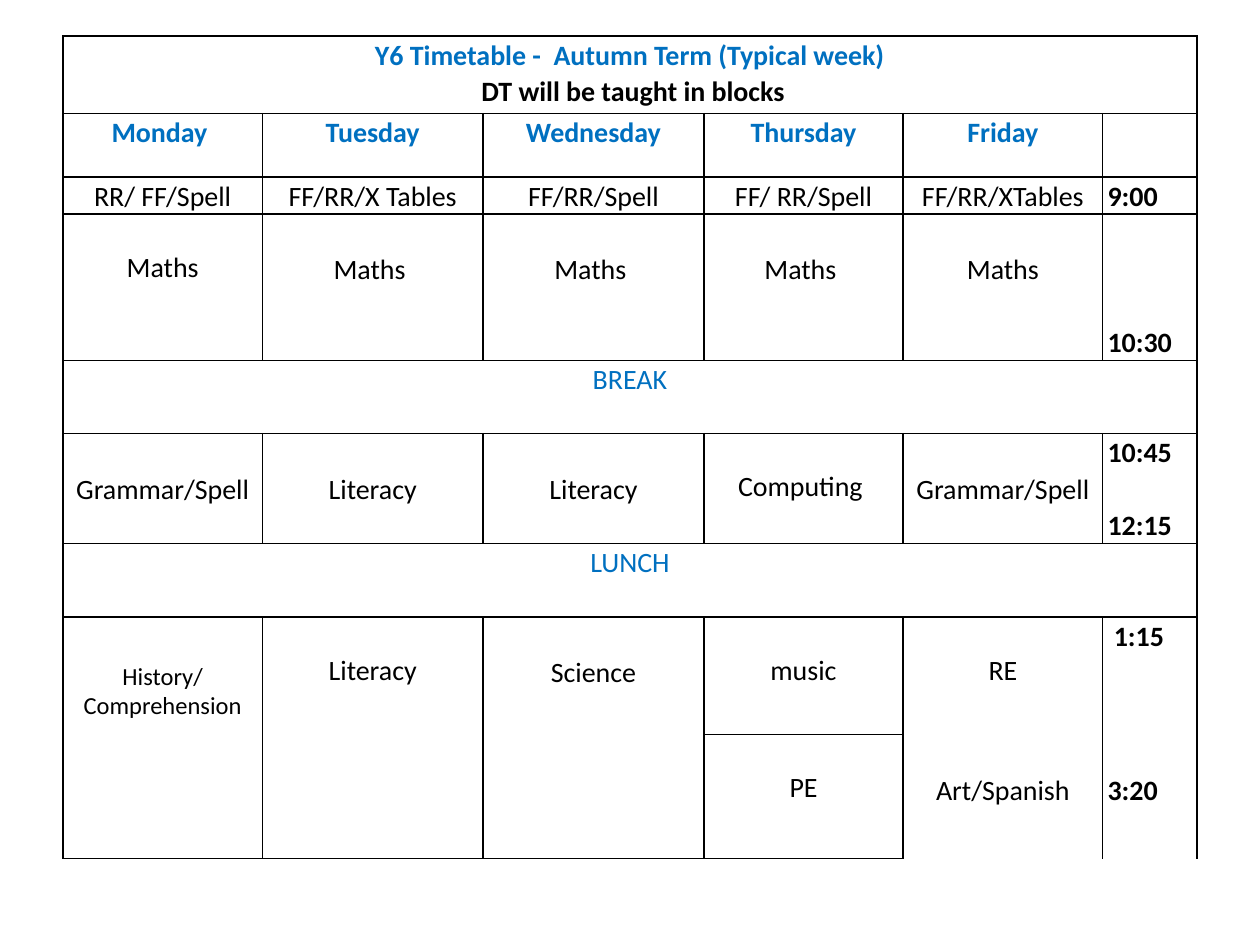
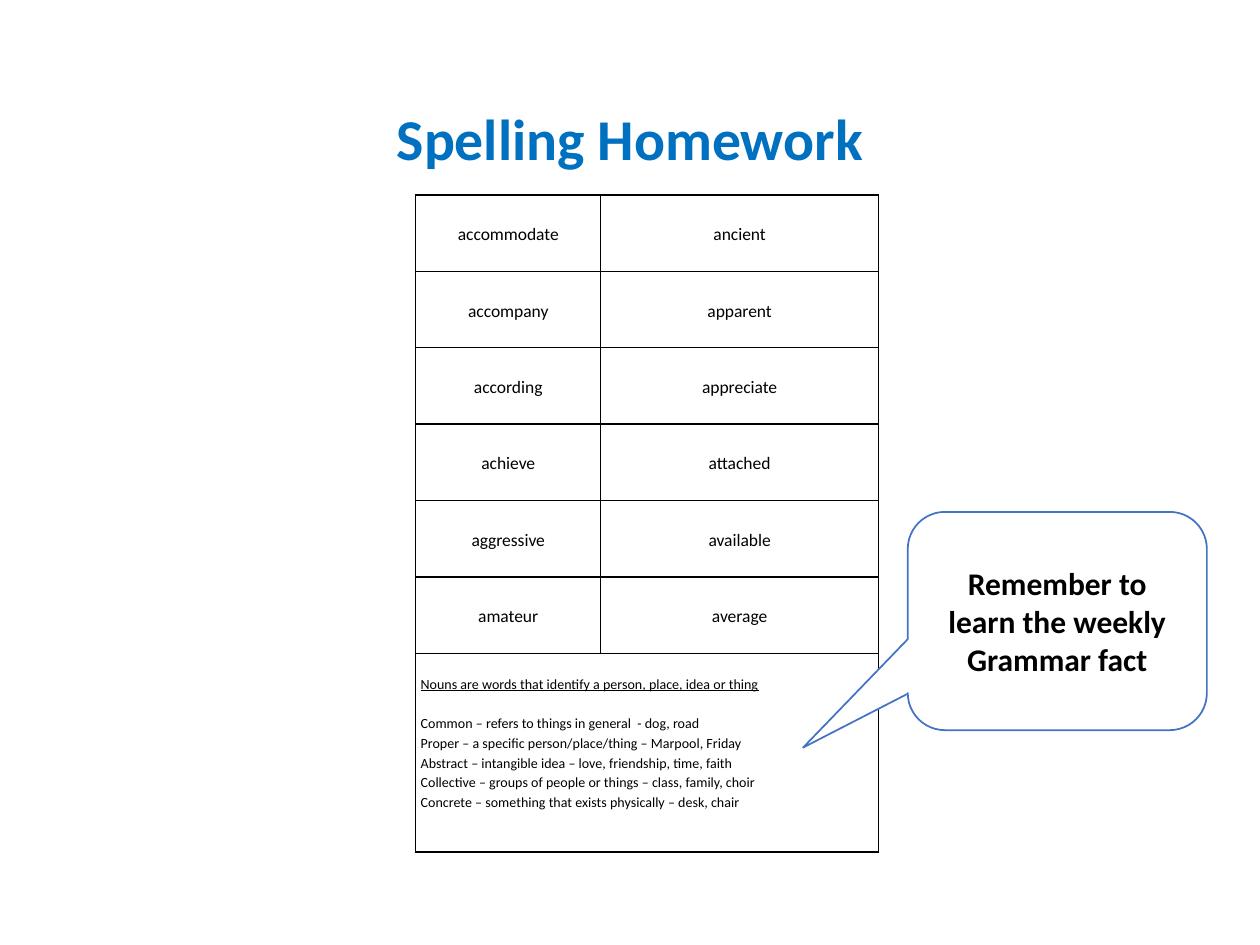
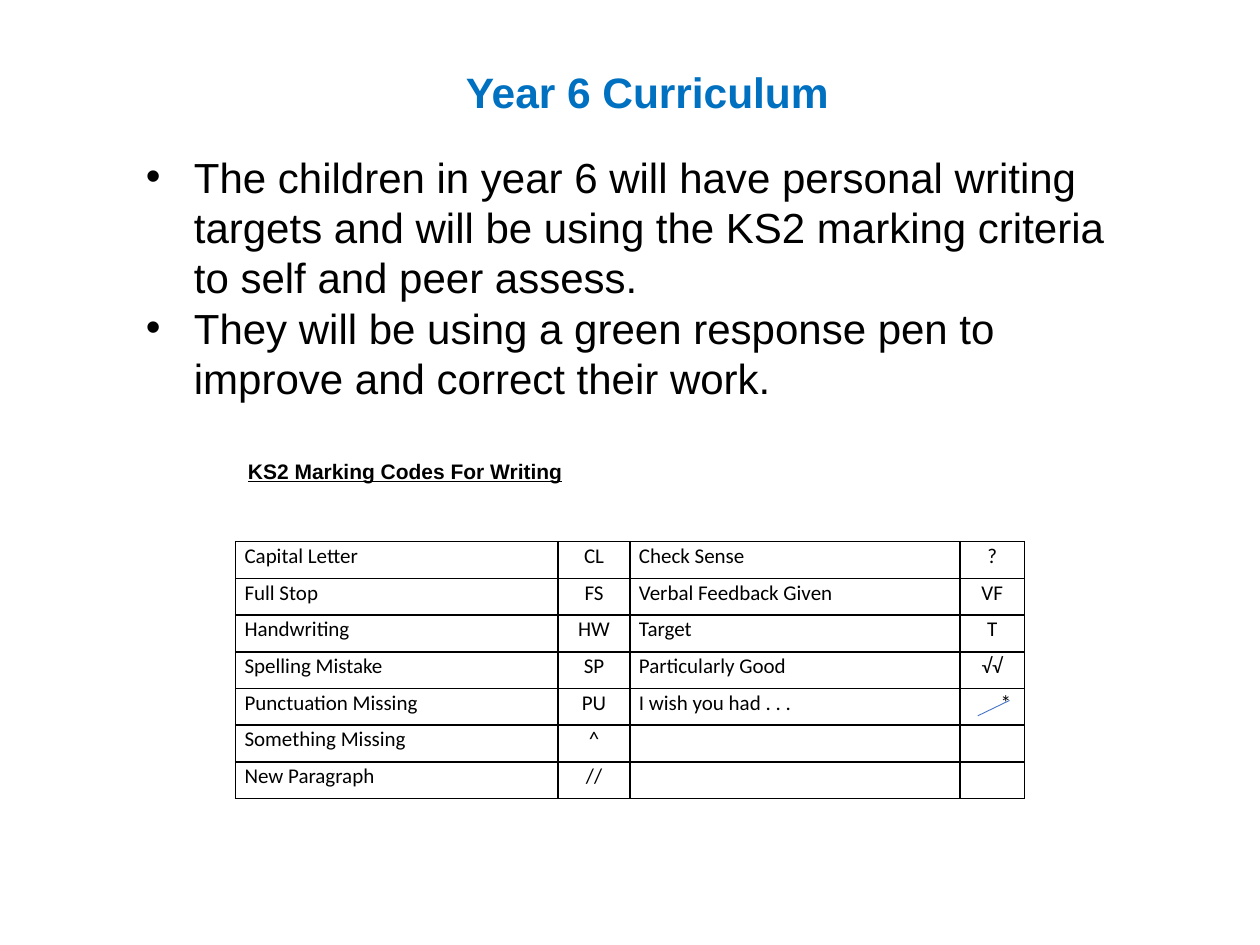
from dataclasses import dataclass, replace

from lxml.etree import SubElement
from pptx import Presentation
from pptx.dml.color import RGBColor
from pptx.enum.shapes import MSO_CONNECTOR as Link, MSO_SHAPE as Shape
from pptx.enum.text import MSO_ANCHOR as Anchor, MSO_AUTO_SIZE as AutoSize, PP_ALIGN as Align
from pptx.oxml.ns import qn
from pptx.util import Cm, Pt

COLORS = {"heading": "0070C0", "ink": "000000", "paper": "FFFFFF", "accent": "4472C4"}
TITLE_ONLY, BLANK = 5, 6
ONE_LINE, SHORT_LINE = 0.74, 0.69


@dataclass
class Line:
    text: str
    size: float = 16
    color: str = "ink"
    bold: bool = False
    underline: bool = False
    align: Align = Align.CENTER
    spacing: float = 1.07
    before: float = 0
    font: str = "Calibri"


@dataclass
class Entry:
    lines: list
    gap: float = 0
    anchor: Anchor = Anchor.TOP
    right: float = None


def lesson(text, gap=0.0, **style):
    return Entry([Line(text, **style)], gap)


def time(text, gap=0.0):
    return lesson(text, gap, bold=True, align=Align.LEFT)


class Deck:
    def __init__(self):
        self.prs = Presentation()
        self.prs.slide_width, self.prs.slide_height = Cm(25.4), Cm(19.05)
        self.slide = None

    def new_slide(self, layout):
        self.slide = self.prs.slides.add_slide(self.prs.slide_layouts[layout])
        self.slide.background.fill.solid()
        self.slide.background.fill.fore_color.rgb = self.rgb("paper")

    def rgb(self, name):
        return RGBColor.from_string(COLORS[name])

    def set_lines(self, frame, lines):
        for index, line in enumerate(lines):
            paragraph = frame.add_paragraph() if index else frame.paragraphs[0]
            paragraph.alignment = line.align
            paragraph.line_spacing = line.spacing
            paragraph.space_before = Pt(line.before)
            run = paragraph.add_run()
            run.text = line.text
            font = run.font
            font.name, font.size = line.font, Pt(line.size)
            font.bold, font.underline = line.bold, line.underline
            font.color.rgb = self.rgb(line.color)

    def title(self, box, line, anchor):
        heading = self.slide.shapes.title
        heading.left, heading.top, heading.width, heading.height = map(Cm, box)
        frame = heading.text_frame
        frame.auto_size, frame.vertical_anchor = AutoSize.NONE, anchor
        self.set_lines(frame, [replace(line, color="heading", bold=True, spacing=0.9)])

    def text(self, box, lines):
        frame = self.slide.shapes.add_textbox(*map(Cm, box)).text_frame
        frame.word_wrap = True
        self.set_lines(frame, lines)
        return frame

    def bullets(self, box, lines, indent):
        for paragraph in self.text(box, lines).paragraphs:
            props = paragraph._p.get_or_add_pPr()
            props.set("marL", str(Cm(indent)))
            props.set("indent", str(-Cm(indent)))
            SubElement(props, qn("a:buFont"), typeface="Arial")
            SubElement(props, qn("a:buChar"), char="•")

    def callout(self, box, adjustments, line):
        bubble = self.slide.shapes.add_shape(Shape.ROUNDED_RECTANGULAR_CALLOUT, *map(Cm, box))
        bubble.shadow.inherit = False
        for index, value in enumerate(adjustments):
            bubble.adjustments[index] = value
        bubble.fill.solid()
        bubble.fill.fore_color.rgb = self.rgb("paper")
        bubble.line.color.rgb, bubble.line.width = self.rgb("accent"), Pt(1)
        bubble.text_frame.word_wrap = True
        bubble.text_frame.vertical_anchor = Anchor.MIDDLE
        self.set_lines(bubble.text_frame, [line])

    def line(self, start, end, width):
        stroke = self.slide.shapes.add_connector(Link.STRAIGHT, *map(Cm, start + end))
        stroke.line.color.rgb, stroke.line.width = self.rgb("accent"), Pt(width)
        SubElement(stroke._element.spPr, qn("a:effectLst"))

    def borders(self, cell, hidden):
        props = cell._tc.get_or_add_tcPr()
        for index, side in enumerate("LRTB"):
            edge = SubElement(props, qn("a:ln" + side), w=str(Pt(1)))
            if side in hidden:
                SubElement(edge, qn("a:noFill"))
            else:
                SubElement(SubElement(edge, qn("a:solidFill")), qn("a:srgbClr"), val=COLORS["ink"])
            props.insert(index, edge)

    def table(self, corner, widths, heights, entries, margin, merges=(), hidden=None, filled=False):
        size = Cm(sum(widths)), Cm(sum(heights))
        grid = self.slide.shapes.add_table(
            len(heights), len(widths), *map(Cm, corner), *size).table
        grid.first_row = grid.horz_banding = False
        for column, width in zip(grid.columns, widths):
            column.width = Cm(width)
        for row, height in zip(grid.rows, heights):
            row.height = Cm(height)
        for r, row in enumerate(entries):
            for c, entry in enumerate(row):
                cell = grid.cell(r, c)
                if filled:
                    cell.fill.solid()
                    cell.fill.fore_color.rgb = self.rgb("paper")
                else:
                    cell.fill.background()
                cell.margin_left = cell.margin_right = Cm(margin)
                cell.margin_top = cell.margin_bottom = 0
                if entry:
                    cell.margin_top, cell.vertical_anchor = Cm(entry.gap), entry.anchor
                    if entry.right is not None:
                        cell.margin_right = Cm(entry.right)
                    self.set_lines(cell.text_frame, entry.lines)
                else:
                    SubElement(cell.text_frame.paragraphs[0]._p, qn("a:endParaRPr"), sz="1000")
                self.borders(cell, (hidden or {}).get((r, c), ""))
        for first, last in merges:
            grid.cell(*first).merge(grid.cell(*last))


def timetable(deck):
    deck.new_slide(BLANK)
    rest = [None] * 5
    days = ["Monday ", "Tuesday", "Wednesday", "Thursday", "Friday"]
    starters = ["RR/ FF/Spell", "FF/RR/X Tables", "FF/RR/Spell", "FF/ RR/Spell", "FF/RR/XTables"]
    maths = ["Maths", "Maths ", "Maths ", "Maths ", "Maths"]
    late_morning = ["Grammar/Spell", "Literacy", "Literacy", "Computing ", "Grammar/Spell"]
    heading = Entry([
        Line("Y6 Timetable -  Autumn Term (Typical week)", color="heading", bold=True),
        Line(" DT will be taught in blocks", bold=True)])
    session = Line("10:45", bold=True, align=Align.LEFT)
    history = [Line(text, 14, spacing=1) for text in ("History/", "Comprehension")]
    entries = [
        [heading] + rest,
        [lesson(day, color="heading", bold=True) for day in days] + [None],
        [lesson(name) for name in starters] + [time("9:00")],
        [lesson(name, ONE_LINE if c else SHORT_LINE) for c, name in enumerate(maths)]
        + [time("10:30", 2.22)],
        [lesson("BREAK", color="heading")] + rest,
        [lesson(name, SHORT_LINE if c == 3 else ONE_LINE) for c, name in enumerate(late_morning)]
        + [Entry([session, replace(session, text="12:15", before=20.8)])],
        [lesson("LUNCH", color="heading")] + rest,
        [Entry(history, 0.9), lesson("Literacy", SHORT_LINE), lesson("Science", ONE_LINE),
         lesson("music", SHORT_LINE), lesson("RE", SHORT_LINE), time(" 1:15")],
        [None] * 4 + [lesson("Art/Spanish", ONE_LINE), time("3:20", ONE_LINE)],
        [None] * 3 + [lesson("PE", SHORT_LINE), None, None],
    ]
    merges = [((r, 0), (r, 5)) for r in (0, 4, 6)]
    merges += [((7, c), (9, c)) for c in range(3)]
    merges += [((7, 3), (8, 3)), ((8, 4), (9, 4)), ((8, 5), (9, 5))]
    open_sides = {(r, c): sides for c in (4, 5) for r, sides in ((7, "B"), (8, "TB"), (9, "T"))}
    deck.table(
        (1.27, 0.73), [4.02, 4.45, 4.45, 4.02, 4.02, 1.9],
        [1.56, 1.28, 0.74, 2.95, 1.47, 2.22, 1.48, 2.37, 0, 2.5],
        entries, 0.1, merges, open_sides, filled=True)


def spelling(deck):
    deck.new_slide(TITLE_ONLY)
    deck.title((1.75, 1.02, 21.9, 3.68), Line("Spelling Homework", 33), Anchor.MIDDLE)
    words = [
        ("accommodate", "ancient"), ("accompany", "apparent"), ("according", "appreciate"),
        ("achieve", "attached"), ("aggressive", "available"), ("amateur", "average")]
    entries = [[Entry([Line(word, 10, spacing=1.15)], anchor=Anchor.MIDDLE) for word in pair]
               for pair in words]
    nouns = Line("Nouns are words that identify a person, place, idea or thing", 8,
                 underline=True, align=Align.LEFT, spacing=1.15)
    kinds = [
        "Common – refers to things in general  - dog, road",
        "Proper – a specific person/place/thing – Marpool, Friday",
        "Abstract – intangible idea – love, friendship, time, faith",
        "Collective – groups of people or things – class, family, choir",
        "Concrete – something that exists physically – desk, chair"]
    facts = [replace(nouns, text=kind, underline=False, before=0 if i else 11.2)
             for i, kind in enumerate(kinds)]
    entries.append([Entry([nouns] + facts, 0.4), None])
    deck.table((8.38, 3.93), [3.73, 5.6], [1.54] * 6 + [4.01], entries, 0.1, [((6, 0), (6, 1))])
    deck.callout((18.3, 10.32, 6.03, 4.4), (-0.85, 0.58, 0.17),
                 Line("Remember to learn the weekly Grammar fact", 18, bold=True, spacing=1))


def curriculum(deck):
    deck.new_slide(TITLE_ONLY)
    deck.title((2.1, 1.32, 21.9, 2.3), Line("Year 6 Curriculum", 24.3, font="Arial"), Anchor.TOP)
    codes = [
        ("Capital Letter", "CL", "Check Sense", "?"),
        ("Full Stop", "FS", "Verbal Feedback Given", "VF"),
        ("Handwriting", "HW", "Target", "T"),
        ("Spelling Mistake", "SP", "Particularly Good", "√√"),
        ("Punctuation Missing", "PU", "I wish you had . . .", "*"),
        ("Something Missing", "^", "", ""),
        ("New Paragraph", "//", "", "")]
    entries = [[lesson(text, size=12, align=Align.CENTER if c % 2 else Align.LEFT) if text else None
                for c, text in enumerate(row)] for row in codes]
    entries[4][3] = Entry([Line("*", 12, align=Align.RIGHT)], right=0.27)
    deck.table((4.75, 10.92), [6.5, 1.45, 6.65, 1.3], [0.74] * 7, entries, 0.18)
    deck.line((19.71, 14.43), (20.35, 14.12), 0.5)
    body = Line("", 24, align=Align.LEFT, spacing=1, font="Arial")
    deck.text((4.75, 9.12, 15.9, 1.27), [
        replace(body, text="KS2 Marking Codes For Writing", size=12, bold=True, underline=True)])
    points = [
        "The children in year 6 will have personal writing targets and will be using "
        "the KS2 marking criteria to self and peer assess.",
        "They will be using a green response pen to improve and correct their work."]
    deck.bullets((2.69, 2.92, 20.6, 7.09), [replace(body, text=point) for point in points], 0.97)


def main():
    deck = Deck()
    timetable(deck)
    spelling(deck)
    curriculum(deck)
    deck.prs.save("out.pptx")


if __name__ == "__main__":
    main()
